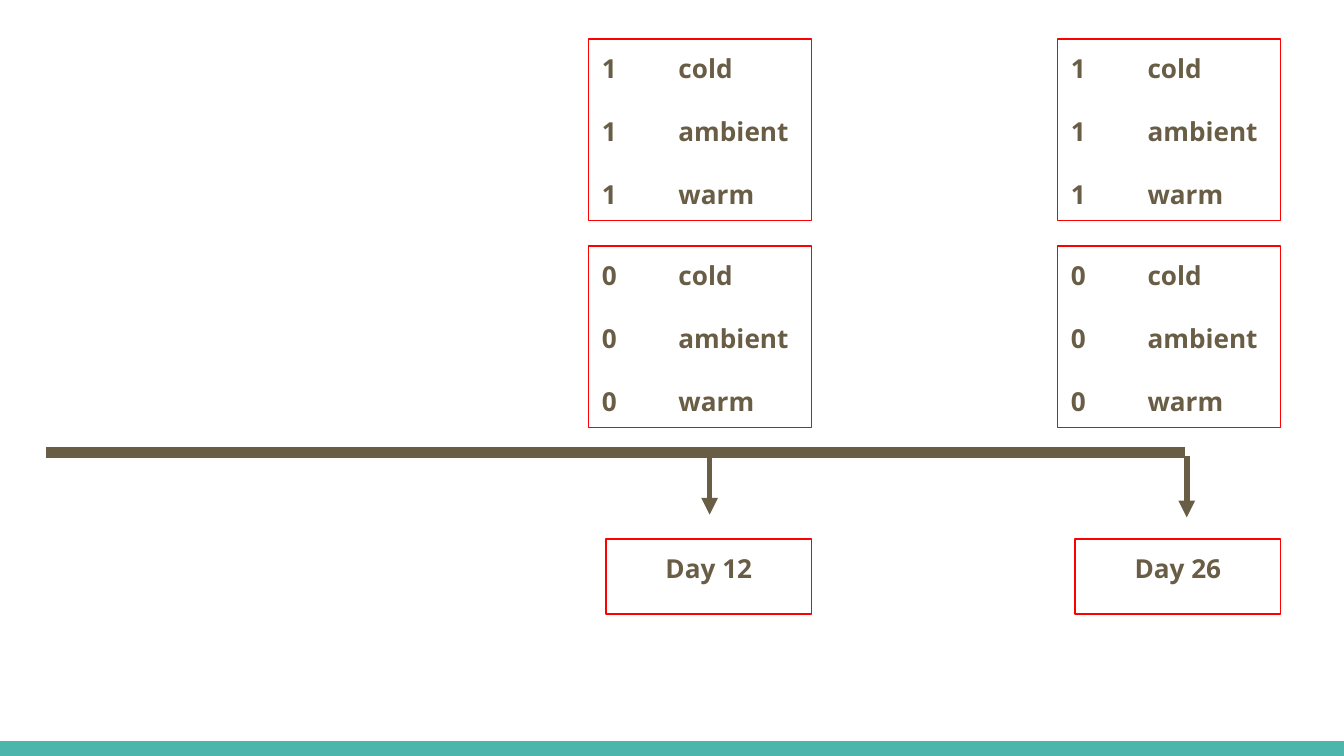
from lxml import etree
from pptx import Presentation
from pptx import util as u
from pptx.dml import color
from pptx.enum import shapes, text
from pptx.oxml import ns

CONDITIONS = ["cold", "ambient", "warm"]
COUNTS = ["1", "0"]
DAYS = ["Day 12", "Day 26"]

THEME = {
    "ink": "695D46", "frame": "FF0000", "band": "4DB6AC",
    "font": "Open Sans", "size": 14, "leading": 16.8,
    "frame_width": 0.75, "timeline_width": 6, "arrow_width": 3,
}

WIDTH = 10
HEIGHT = WIDTH * 9 / 16
BAND_HEIGHT = 0.11
COLUMN_RIGHT, COLUMN_STEP = 6.04, 3.49
GROUP_TOP, GROUP_STEP = 0.29, 1.54
GROUP_SIZE = (1.66, 1.35)
DAY_TOP, DAY_SIZE = 4.01, (1.53, 0.56)
TIMELINE = (0.34, 8.82, 3.37)
ARROWS = [(5.28, 3.37), (8.83, 3.39)]
ARROW_LENGTH = 0.46
INSET, LABEL_TAB = 0.1, 0.57


def rgb(name):
    return color.RGBColor.from_string(THEME[name])


def add_rect(slide, left, top, width, height):
    rect = slide.shapes.add_shape(
        shapes.MSO_SHAPE.RECTANGLE, *map(u.Inches, (left, top, width, height)))
    rect.shadow.inherit = False
    return rect


def add_frame(slide, right, top, size, content, align):
    frame = add_rect(slide, right - size[0], top, *size)
    frame.fill.background()
    frame.line.color.rgb = rgb("frame")
    frame.line.width = u.Pt(THEME["frame_width"])
    body = frame.text_frame
    body.word_wrap = True
    body.vertical_anchor = text.MSO_ANCHOR.TOP
    body.margin_left = body.margin_right = u.Inches(INSET)
    body.margin_top = body.margin_bottom = u.Inches(INSET)
    body.text = content
    for paragraph in body.paragraphs:
        paragraph.alignment = align
        paragraph.line_spacing = u.Pt(THEME["leading"])
        paragraph.space_after = u.Pt(THEME["leading"])
        for run in paragraph.runs:
            run.font.name = THEME["font"]
            run.font.size = u.Pt(THEME["size"])
            run.font.bold = True
            run.font.color.rgb = rgb("ink")
    return body


def add_tab(paragraph):
    tabs = etree.SubElement(paragraph._p.get_or_add_pPr(), ns.qn("a:tabLst"))
    etree.SubElement(tabs, ns.qn("a:tab"), pos=str(u.Inches(LABEL_TAB)), algn="l")


def add_line(slide, x1, y1, x2, y2, width, arrow=False):
    line = slide.shapes.add_connector(
        shapes.MSO_CONNECTOR.STRAIGHT, *map(u.Inches, (x1, y1, x2, y2)))
    line.line.color.rgb = rgb("ink")
    line.line.width = u.Pt(THEME[width])
    if arrow:
        etree.SubElement(line.line._get_or_add_ln(), ns.qn("a:tailEnd"), type="triangle")
    etree.SubElement(line._element.spPr, ns.qn("a:effectLst"))


def main():
    deck = Presentation()
    deck.slide_width, deck.slide_height = u.Inches(WIDTH), u.Inches(HEIGHT)
    slide = deck.slides.add_slide(deck.slide_layouts[6])

    band = add_rect(slide, 0, HEIGHT - BAND_HEIGHT, WIDTH, BAND_HEIGHT)
    band.fill.solid()
    band.fill.fore_color.rgb = rgb("band")
    band.line.fill.background()

    start, end, level = TIMELINE
    add_line(slide, start, level, end, level, "timeline_width")
    for x, y in ARROWS:
        add_line(slide, x, y, x, y + ARROW_LENGTH, "arrow_width", arrow=True)

    for column, day in enumerate(DAYS):
        right = COLUMN_RIGHT + column * COLUMN_STEP
        add_frame(slide, right, DAY_TOP, DAY_SIZE, day, text.PP_ALIGN.CENTER)
        for row, count in enumerate(COUNTS):
            content = "\n".join(f"{count}\t{condition}" for condition in CONDITIONS)
            group = add_frame(slide, right, GROUP_TOP + row * GROUP_STEP,
                              GROUP_SIZE, content, text.PP_ALIGN.LEFT)
            for paragraph in group.paragraphs:
                add_tab(paragraph)

    deck.save("out.pptx")


if __name__ == "__main__":
    main()
